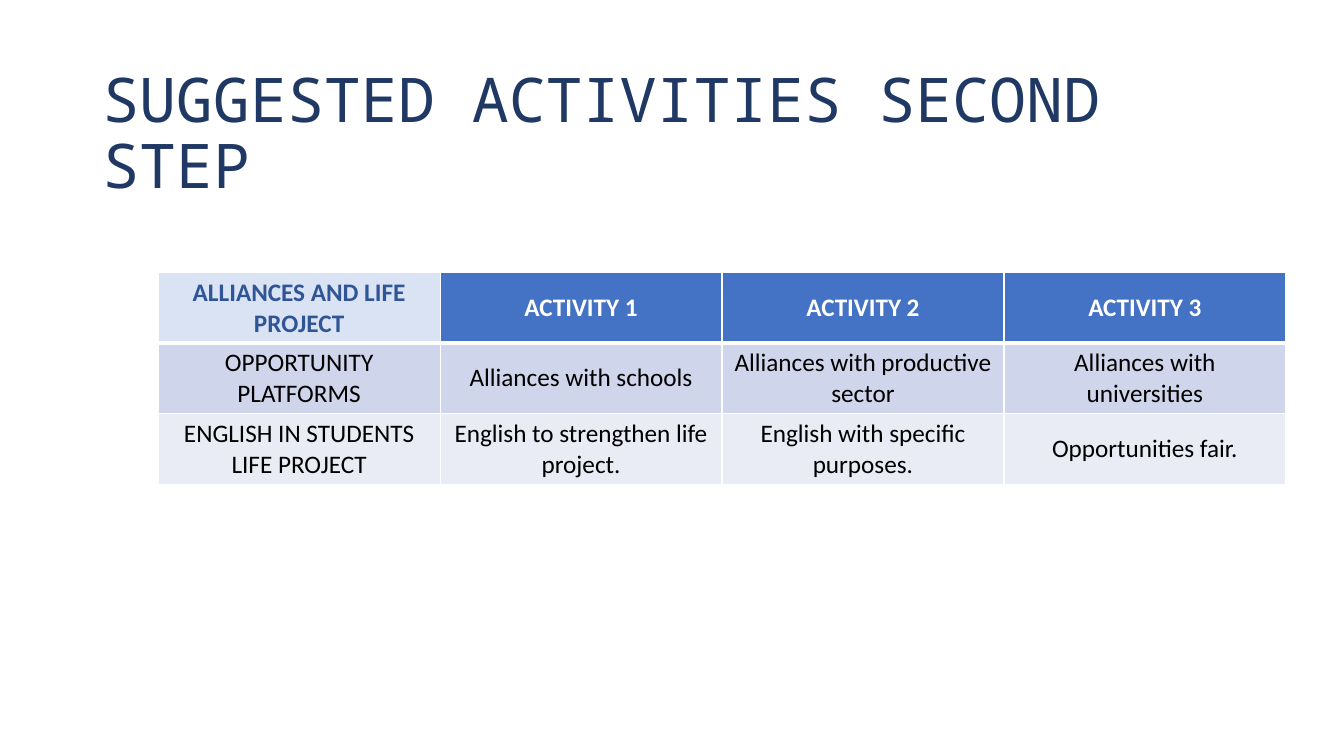
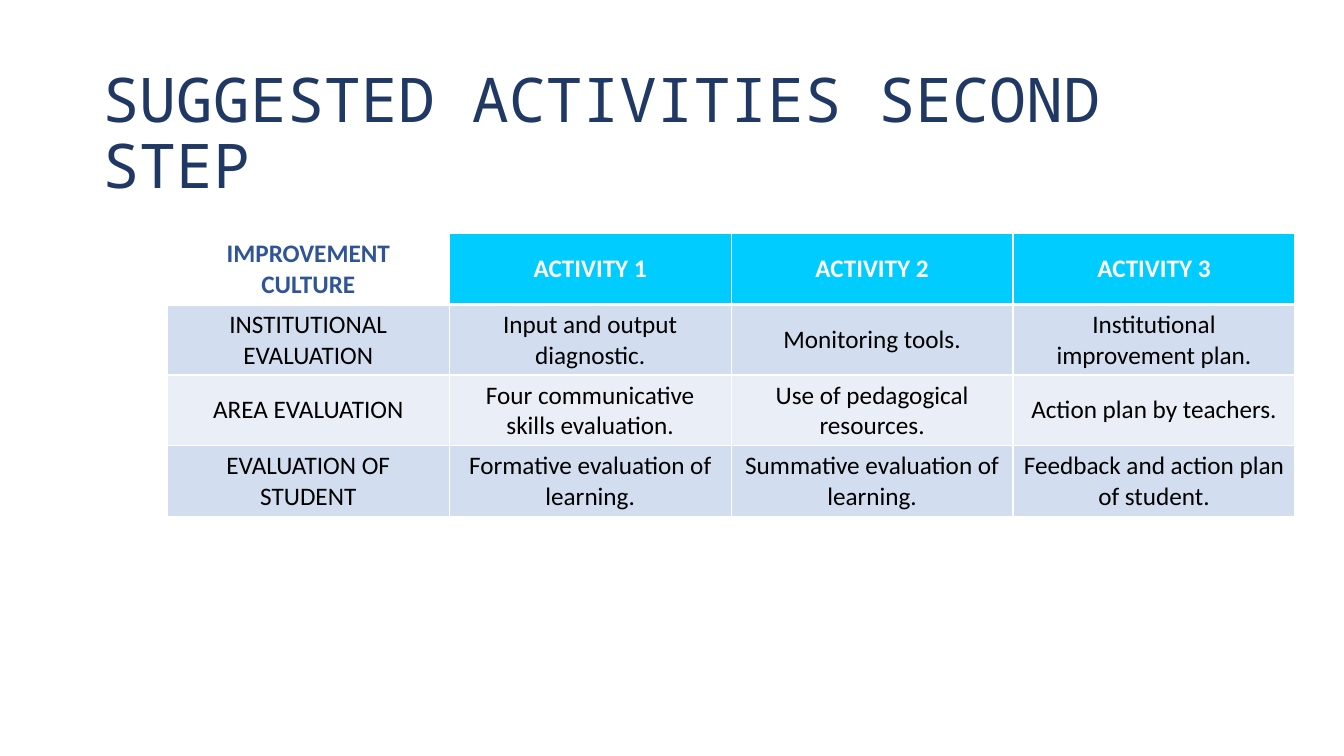
from lxml.etree import SubElement
from pptx import Presentation
from pptx.dml.color import RGBColor
from pptx.enum.text import MSO_ANCHOR, PP_ALIGN
from pptx.oxml.ns import qn
from pptx.util import Pt

WHITE = "FFFFFF"
BLACK = "000000"
NAVY = "203864"
BLUE = "2F5597"
TITLE = "SUGGESTED ACTIVITIES SECOND STEP"
ACTIVITIES = ["ACTIVITY 1", "ACTIVITY 2", "ACTIVITY 3"]
COL_WIDTH = 201.4
ROW_HEIGHT = 50.4

TABLES = [
    {
        "left": 113, "top": 194.5,
        "corner": "DAE3F3", "header": "4472C4", "bands": ["CFD5EA", "E9EBF5"],
        "rows": [
            ["ALLIANCES AND LIFE PROJECT", *ACTIVITIES],
            ["OPPORTUNITY PLATFORMS", "Alliances with schools",
             "Alliances with productive sector", "Alliances with universities"],
            ["ENGLISH IN STUDENTS LIFE PROJECT", "English to strengthen life project.",
             "English with specific purposes.", "Opportunities fair."],
        ],
    },
    {
        "left": 119.5, "top": 167,
        "corner": WHITE, "header": "00CCFF", "bands": ["D2DEEF", "EAEFF7"],
        "rows": [
            ["IMPROVEMENT CULTURE", *ACTIVITIES],
            ["INSTITUTIONAL EVALUATION", "Input and output diagnostic.",
             "Monitoring tools.", "Institutional improvement plan."],
            ["AREA EVALUATION", "Four communicative skills evaluation.",
             "Use of pedagogical resources.", "Action plan by teachers."],
            ["EVALUATION OF STUDENT", "Formative evaluation of learning.",
             "Summative evaluation of learning.", "Feedback and action plan of student."],
        ],
    },
]


def rgb(color):
    return RGBColor.from_string(color)


def set_borders(cell, top, bottom):
    """Draw white cell borders, 1 pt at the sides; call before filling the cell."""
    tcPr = cell._tc.get_or_add_tcPr()
    for tag, width in (("a:lnL", 1), ("a:lnR", 1), ("a:lnT", top), ("a:lnB", bottom)):
        ln = SubElement(tcPr, qn(tag), w=str(Pt(width)))
        SubElement(SubElement(ln, qn("a:solidFill")), qn("a:srgbClr"), val=WHITE)


prs = Presentation()
prs.slide_width, prs.slide_height = Pt(960), Pt(540)

for spec_table in TABLES:
    s = prs.slides.add_slide(prs.slide_layouts[6])

    tf = s.shapes.add_textbox(Pt(66), Pt(44.6), Pt(852.5), Pt(104.4)).text_frame
    tf.word_wrap = True
    tf.vertical_anchor = MSO_ANCHOR.MIDDLE
    p = tf.paragraphs[0]
    p.text = TITLE
    p.line_spacing = 0.9
    p.font.name, p.font.size = "Noto Sans Mono", Pt(44)
    p.font.color.rgb = rgb(NAVY)

    rows = spec_table["rows"]
    table = s.shapes.add_table(
        len(rows), len(rows[0]), Pt(spec_table["left"]), Pt(spec_table["top"]),
        Pt(COL_WIDTH * len(rows[0])), Pt(ROW_HEIGHT * len(rows))).table
    table.first_row = table.horz_banding = False

    for i, row in enumerate(rows):
        for j, text in enumerate(row):
            if i > 0:
                fill, color = spec_table["bands"][(i - 1) % 2], BLACK
            elif j > 0:
                fill, color = spec_table["header"], WHITE
            else:
                fill, color = spec_table["corner"], BLUE
            cell = table.cell(i, j)
            set_borders(cell, top=3 if i == 1 else 1, bottom=3 if i == 0 else 1)
            cell.fill.solid()
            cell.fill.fore_color.rgb = rgb(fill)
            cell.vertical_anchor = MSO_ANCHOR.MIDDLE
            p = cell.text_frame.paragraphs[0]
            p.text = text
            p.alignment = PP_ALIGN.CENTER
            p.font.name, p.font.size, p.font.bold = "Calibri", Pt(18), i == 0
            p.font.color.rgb = rgb(color)

prs.save("out.pptx")
